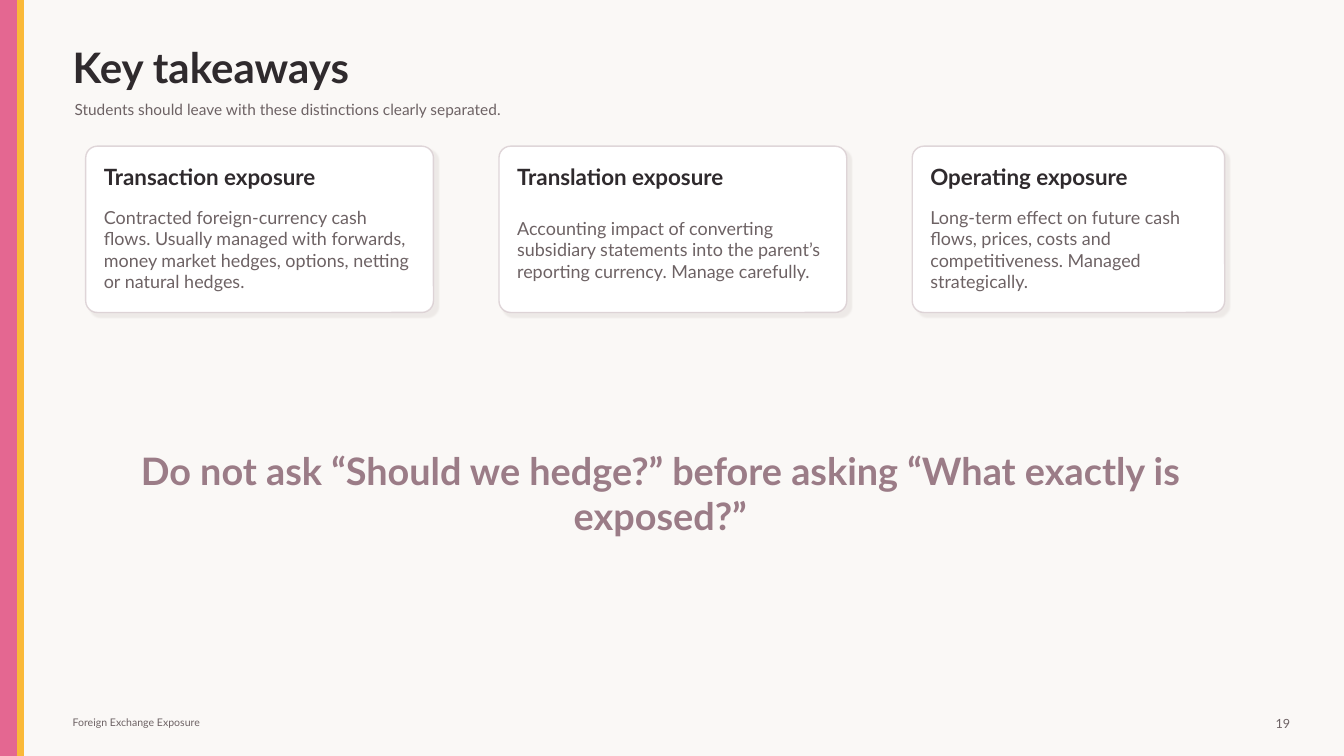
from lxml.etree import SubElement
from pptx import Presentation
from pptx.dml.color import RGBColor
from pptx.enum.shapes import MSO_SHAPE
from pptx.enum.text import MSO_ANCHOR, MSO_AUTO_SIZE, PP_ALIGN
from pptx.oxml import parse_xml
from pptx.oxml.ns import nsdecls, qn
from pptx.util import Inches, Pt

CELL = 0.1  # inches per grid column and row
COLUMNS, ROWS = 133.33, 75

PAPER, WHITE = "FAF8F6", "FFFFFF"
PINK, YELLOW, MAUVE = "E46791", "FAB938", "9B7C87"
INK, GREY = "2F2A2D", "6D6264"
BORDER, SHADOW = "D8CCD0", "B8ADA8"

# Column, width, heading, explanation
CARDS = [
    (8.5, 34.5, "Transaction exposure",
     "Contracted foreign-currency cash flows. Usually managed with forwards, "
     "money market hedges, options, netting or natural hedges."),
    (49.5, 34.5, "Translation exposure",
     "Accounting impact of converting subsidiary statements into the parent’s "
     "reporting currency. Manage carefully."),
    (90.5, 31, "Operating exposure",
     "Long-term effect on future cash flows, prices, costs and "
     "competitiveness. Managed strategically."),
]


def color(value):
    return RGBColor.from_string(value)


def cells(*counts):
    """Convert grid columns or rows to lengths."""
    return [Inches(count * CELL) for count in counts]


class SlideBuilder:
    font = "Lato"

    def __init__(self, deck):
        self.page = deck.slides.add_slide(deck.slide_layouts[5])
        fill = self.page.background.fill
        fill.solid()
        fill.fore_color.rgb = color(PAPER)

    def set_text(self, box, text, size, ink, bold=False, align=PP_ALIGN.LEFT):
        frame = box.text_frame
        frame.text = text
        frame.word_wrap = True
        frame.auto_size = MSO_AUTO_SIZE.NONE
        frame.vertical_anchor = MSO_ANCHOR.MIDDLE
        frame.margin_left = frame.margin_right = 0
        frame.margin_top = frame.margin_bottom = 0
        para = frame.paragraphs[0]
        para.alignment = align
        for span in para.runs:
            span.font.name = self.font
            span.font.size = Pt(size)
            span.font.bold = bold
            span.font.color.rgb = color(ink)

    def title(self, place, text, size, ink):
        box = self.page.shapes.title
        box.left, box.top, box.width, box.height = cells(*place)
        self.set_text(box, text, size, ink, bold=True)

    def text(self, place, text, size, ink, **style):
        box = self.page.shapes.add_textbox(*cells(*place))
        self.set_text(box, text, size, ink, **style)

    def shape(self, kind, place, fill, line):
        shape = self.page.shapes.add_shape(kind, *cells(*place))
        shape.shadow.inherit = False
        shape.fill.solid()
        shape.fill.fore_color.rgb = color(fill)
        shape.line.color.rgb = color(line)
        shape.line.width = Pt(1)
        return shape

    def stripe(self, column, width, fill):
        self.shape(MSO_SHAPE.RECTANGLE, (column, 0, width, ROWS), fill, fill)

    def card(self, column, width, heading, explanation):
        panel = self.shape(MSO_SHAPE.ROUNDED_RECTANGLE,
                           (column, 14.5, width, 16.5), WHITE, BORDER)
        panel.adjustments[0] = 0.07
        self.soften(panel)
        inset = 1.8
        left, inner = column + inset, width - 2 * inset
        self.text((left, 16.1, inner, 2.8), heading, 16, INK, bold=True)
        self.text((left, 20, inner, 9.5), explanation, 12.8, GREY)

    def soften(self, panel):
        """Make the outline slightly transparent and add a faint shadow."""
        properties = panel.element.spPr
        outline = properties.find(qn("a:ln")).find(".//" + qn("a:srgbClr"))
        SubElement(outline, qn("a:alpha"), val="80000")
        properties.find(qn("a:effectLst")).append(parse_xml(
            f'<a:outerShdw {nsdecls("a")} blurRad="{Pt(1)}" dist="{Pt(4)}" '
            f'dir="2700000" algn="tl" rotWithShape="0">'
            f'<a:srgbClr val="{SHADOW}"><a:alpha val="18000"/></a:srgbClr>'
            f'</a:outerShdw>'))


def main():
    deck = Presentation()
    deck.slide_width, deck.slide_height = cells(COLUMNS, ROWS)
    slide = SlideBuilder(deck)
    slide.stripe(0, 1.8, PINK)
    slide.stripe(1.8, 0.5, YELLOW)
    slide.title((7.2, 4.2, 119, 4.8), "Key takeaways", 30, INK)
    slide.text((7.4, 9.4, 114, 2.8),
               "Students should leave with these distinctions clearly separated.",
               11, GREY)
    for card in CARDS:
        slide.card(*card)
    slide.text((10, 45.5, 111, 6.8),
               "Do not ask “Should we hedge?” before asking “What exactly is exposed?”",
               27, MAUVE, bold=True, align=PP_ALIGN.CENTER)
    slide.text((7.2, 70.8, 35, 1.8), "Foreign Exchange Exposure", 7.5, GREY)
    slide.text((124.5, 70.5, 3.5, 2.5), "19", 9, GREY, align=PP_ALIGN.RIGHT)
    deck.save("out.pptx")


if __name__ == "__main__":
    main()
